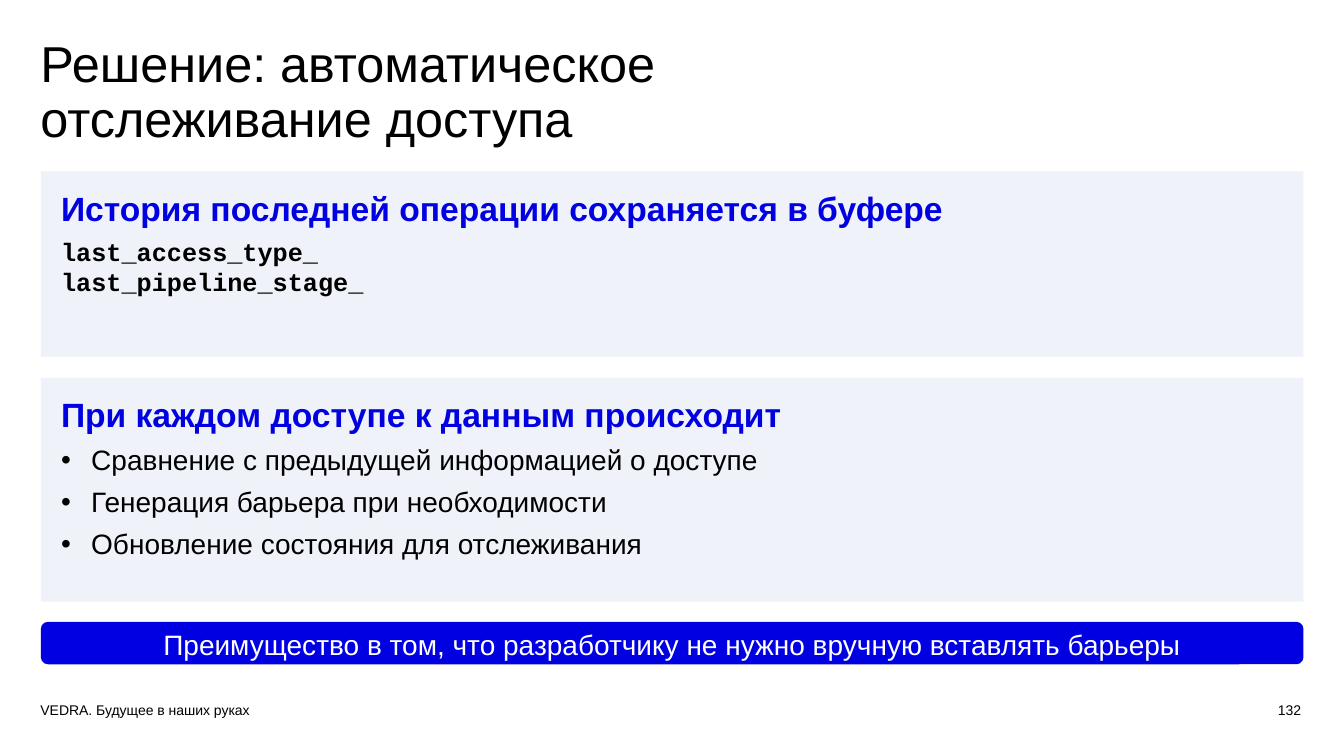
from dataclasses import dataclass

from lxml.etree import SubElement
from pptx import Presentation
from pptx.dml.color import RGBColor
from pptx.enum.shapes import MSO_SHAPE as Shape
from pptx.enum.text import MSO_ANCHOR as Anchor, MSO_AUTO_SIZE as AutoSize, PP_ALIGN as Align
from pptx.oxml.ns import qn
from pptx.util import Cm, Pt

COLORS = {"ink": "000000", "accent": "0000E1", "panel": "EFF2F9", "white": "FFFFFF"}


@dataclass(frozen=True)
class Line:
    """One paragraph with its formatting."""
    text: str
    size: float
    color: str = "ink"
    font: str = "Arial"
    bold: bool = False
    bullet: bool = False
    after: float = 0
    align: Align = Align.LEFT
    spacing: float = 1.0


@dataclass(frozen=True)
class Block:
    """A box in centimetres; insets run left, top, right, bottom."""
    left: float
    top: float
    width: float
    height: float
    lines: tuple[Line, ...]
    insets: tuple[float, ...] = (0.25, 0.13, 0.25, 0.13)
    fill: str = ""
    outline: Shape = Shape.RECTANGLE
    anchor: Anchor = Anchor.TOP
    wrap: bool = True


def heading(text: str) -> Line:
    """Return the heading of a panel."""
    return Line(text, 24, "accent", bold=True, after=6)


def code(text: str) -> Line:
    """Return a line of code."""
    return Line(text, 18, font="Courier New", bold=True)


def item(text: str) -> Line:
    """Return a bulleted line."""
    return Line(text, 20, bullet=True, after=6)


LEFT, WIDTH = 1.03, 31.82
PANEL_INSETS = (0.51, 0.41, 0.51, 0.51)

TITLE = Block(1.02, 0.86, 27.69, 2.11,
              (Line("Решение: автоматическое \vотслеживание доступа", 36, spacing=0.9),),
              insets=(0, 0.13, 0.25, 0.13))

BLOCKS = (
    Block(LEFT, 4.32, WIDTH, 4.67, (
        heading("История последней операции сохраняется в буфере"),
        code("last_access_type_"),
        code("last_pipeline_stage_"),
    ), PANEL_INSETS, "panel"),
    Block(LEFT, 9.52, WIDTH, 5.64, (
        heading("При каждом доступе к данным происходит"),
        item("Сравнение с предыдущей информацией о доступе"),
        item("Генерация барьера при необходимости"),
        item("Обновление состояния для отслеживания"),
    ), PANEL_INSETS, "panel"),
    Block(LEFT, 15.67, WIDTH, 1.07, (
        Line("Преимущество в том, что разработчику не нужно вручную вставлять барьеры",
             20, "white", align=Align.CENTER),
    ), (0.25, 0.2, 0.25, 0.13), "accent", Shape.ROUNDED_RECTANGLE, Anchor.MIDDLE),
    Block(0.77, 17.55, 5.84, 0.68, (Line("VEDRA. Будущее в наших руках", 10),), wrap=False),
    Block(24.41, 17.55, 8.38, 1.02, (Line("132", 10, align=Align.RIGHT),),
          (0.25, 0.13, 0, 0.13)),
)


def rgb(name: str) -> RGBColor:
    """Look up a colour by name."""
    return RGBColor.from_string(COLORS[name])


def add_bullet(para) -> None:
    """Give a paragraph a hanging bullet."""
    props = para._p.get_or_add_pPr()
    props.set("marL", str(Cm(0.76)))
    props.set("indent", str(-Cm(0.76)))
    SubElement(props, qn("a:buFont"), typeface="Arial")
    SubElement(props, qn("a:buChar"), char="•")


def write_text(box, block: Block) -> None:
    """Fill a box with the lines of its block."""
    frame = box.text_frame
    frame.auto_size = AutoSize.NONE
    frame.word_wrap = block.wrap
    frame.vertical_anchor = block.anchor
    (frame.margin_left, frame.margin_top,
     frame.margin_right, frame.margin_bottom) = map(Cm, block.insets)
    for index, line in enumerate(block.lines):
        para = frame.add_paragraph() if index else frame.paragraphs[0]
        para.text = line.text
        para.alignment = line.align
        para.line_spacing = line.spacing
        para.space_before = Pt(0)
        para.space_after = Pt(line.after)
        if line.bullet:
            add_bullet(para)
        font = para.font
        font.name, font.size, font.bold = line.font, Pt(line.size), line.bold
        font.color.rgb = rgb(line.color)


def add_block(page, block: Block) -> None:
    """Draw a filled shape or a plain text box."""
    place = map(Cm, (block.left, block.top, block.width, block.height))
    if block.fill:
        box = page.shapes.add_shape(block.outline, *place)
        box.shadow.inherit = False
        box.fill.solid()
        box.fill.fore_color.rgb = rgb(block.fill)
        box.line.fill.background()
    else:
        box = page.shapes.add_textbox(*place)
    write_text(box, block)


def place_title(page, block: Block) -> None:
    """Move and format the title placeholder."""
    title = page.shapes.title
    title.left, title.top = Cm(block.left), Cm(block.top)
    title.width, title.height = Cm(block.width), Cm(block.height)
    write_text(title, block)


def main() -> None:
    """Build and save the slide."""
    deck = Presentation()
    deck.slide_width, deck.slide_height = Cm(33.87), Cm(19.05)
    page = deck.slides.add_slide(deck.slide_layouts.get_by_name("Title Only"))
    place_title(page, TITLE)
    for block in BLOCKS:
        add_block(page, block)
    deck.save("out.pptx")


if __name__ == "__main__":
    main()
